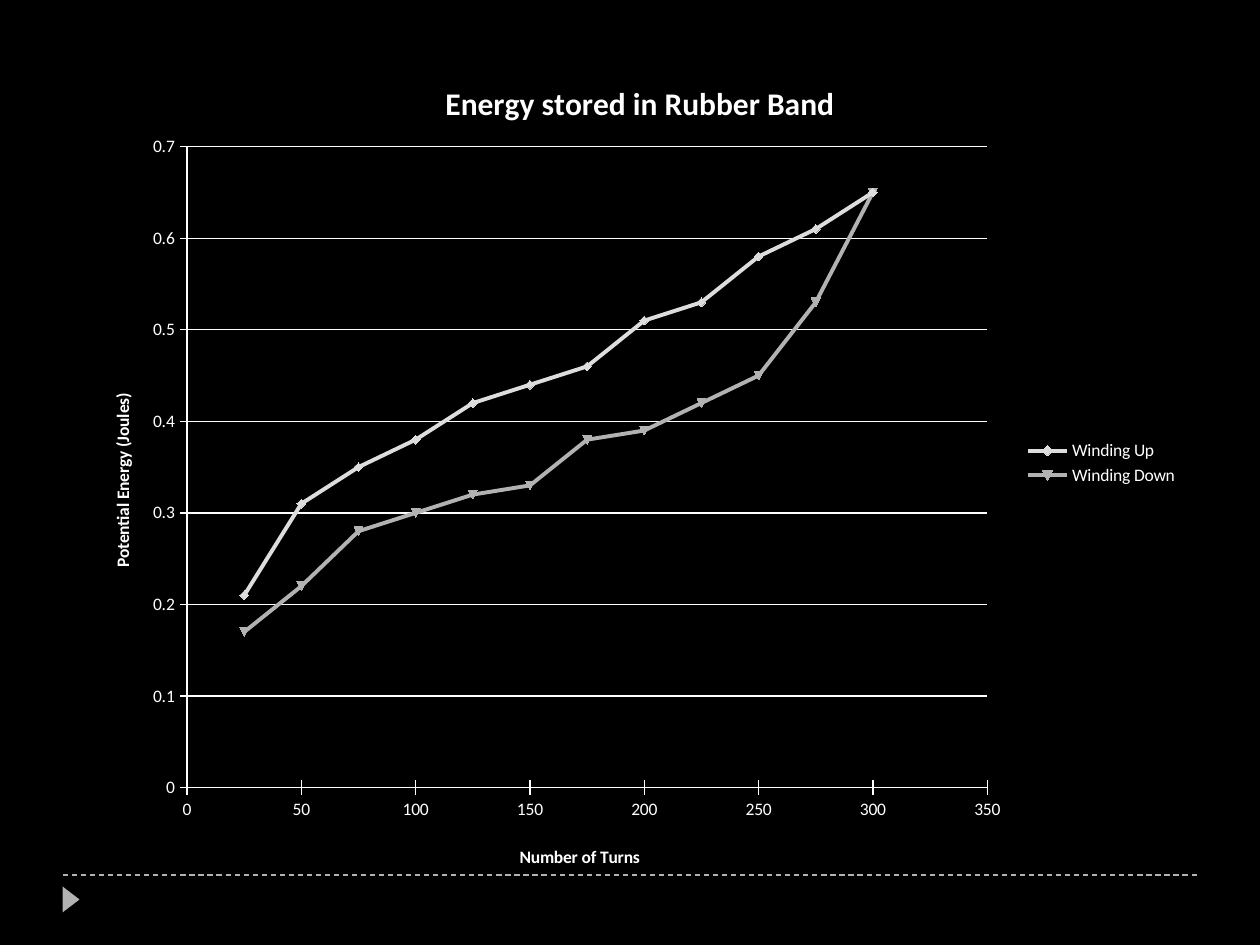
from pptx import Presentation
from pptx.chart.data import XyChartData
from pptx.dml.color import RGBColor
from pptx.enum.chart import (XL_CHART_TYPE, XL_LEGEND_POSITION, XL_MARKER_STYLE,
                             XL_TICK_MARK)
from pptx.enum.dml import MSO_LINE
from pptx.enum.shapes import MSO_CONNECTOR, MSO_SHAPE
from pptx.oxml import parse_xml
from pptx.oxml.ns import nsdecls, qn
from pptx.util import Pt

SCATTER = XL_CHART_TYPE.XY_SCATTER_SMOOTH
RIGHT = XL_LEGEND_POSITION.RIGHT
AUTO = XL_MARKER_STYLE.AUTOMATIC
CROSS, NO_TICK = XL_TICK_MARK.CROSS, XL_TICK_MARK.NONE
DASH = MSO_LINE.DASH
STRAIGHT = MSO_CONNECTOR.STRAIGHT
TRIANGLE = MSO_SHAPE.ISOSCELES_TRIANGLE

SCALE = 914400 / 126
FONT = "Calibri"
WHITE, BLACK, LIGHT, GREY = "FFFFFF", "000000", "DDDDDD", "B2B2B2"
FRAME = (78, 39, 1113, 848)
TURNS = range(25, 301, 25)
SERIES = [
    ("Winding Up", LIGHT,
     [0.21, 0.31, 0.35, 0.38, 0.42, 0.44, 0.46, 0.51, 0.53, 0.58, 0.61, 0.65]),
    ("Winding Down", GREY,
     [0.17, 0.22, 0.28, 0.3, 0.32, 0.33, 0.38, 0.39, 0.42, 0.45, 0.53, 0.65]),
]


def px(*vals):
    return [round(v * SCALE) for v in vals]


def paint(fill, tone):
    fill.solid()
    fill.fore_color.rgb = RGBColor.from_string(tone)


def stroke(line, tone, width):
    paint(line.fill, tone)
    line.width = Pt(width)


def style(font, size=10, bold=False, tone=WHITE):
    font.name, font.size, font.bold = FONT, Pt(size), bold
    font.color.rgb = RGBColor.from_string(tone)


def place(node, left, top, size=None):
    """Pin a chart part at slide pixels, as shares of the chart frame."""
    x, y, wide, high = FRAME
    vals = {"x": (left - x) / wide, "y": (top - y) / high}
    inner = ""
    if size:
        vals.update(w=size[0] / wide, h=size[1] / high)
        inner = '<c:layoutTarget val="inner"/>'
    modes = '<c:xMode val="edge"/><c:yMode val="edge"/>'
    parts = "".join(f'<c:{k} val="{v:.3f}"/>' for k, v in vals.items())
    layout = parse_xml(f'<c:layout {nsdecls("c")}><c:manualLayout>{inner}{modes}'
                       f'{parts}</c:manualLayout></c:layout>')
    old = node.find(qn("c:layout"))
    if old is not None:
        node.remove(old)
    text = node.find(qn("c:tx"))
    node.insert(0 if text is None else 1, layout)


def add_title(host, text, left, top, **form):
    """Give a chart or an axis its title."""
    title = getattr(host, "chart_title", None) or host.axis_title
    para = title.text_frame.paragraphs[0]
    run = para.add_run()
    run.text = text
    style(run.font, bold=True, **form)
    place(title._element, left, top)


def set_axis(axis, top, step, form):
    axis.minimum_scale, axis.maximum_scale, axis.major_unit = 0, top, step
    axis.major_tick_mark, axis.minor_tick_mark = CROSS, NO_TICK
    axis.tick_labels.number_format = form
    axis.tick_labels.number_format_is_linked = False
    style(axis.tick_labels.font)
    stroke(axis.format.line, WHITE, 0.75)


def add_graph(slide):
    data = XyChartData()
    for name, _, vals in SERIES:
        row = data.add_series(name)
        for turn, val in zip(TURNS, vals):
            row.add_data_point(turn, val)
    chart = slide.shapes.add_chart(SCATTER, *px(*FRAME), data).chart
    style(chart.font)
    plot = chart.plots[0]
    plot.vary_by_categories = False
    for row, (_, tone, _) in zip(plot.series, SERIES):
        row.smooth = True
        stroke(row.format.line, tone, 2.25)
        row.marker.style, row.marker.size = AUTO, 5
        paint(row.marker.format.fill, tone)
        stroke(row.marker.format.line, tone, 0.75)

    across, up = chart.category_axis, chart.value_axis
    set_axis(across, 350, 50, "General")
    set_axis(up, 0.7, 0.1, "General")
    across.has_major_gridlines = False
    up.has_major_gridlines = True
    stroke(up.major_gridlines.format.line, WHITE, 0.75)
    add_title(chart, "Energy stored in Rubber Band", 440, 76, size=18)
    add_title(across, "Number of Turns", 516, 843)
    add_title(up, "Potential Energy (Joules)", 108, 390)
    place(chart._chartSpace.chart.plotArea, 187, 147, (800, 641))

    chart.has_legend = True
    chart.legend.position = RIGHT
    chart.legend.include_in_layout = False
    style(chart.legend.font)


def add_rule(slide, *ends):
    rule = slide.shapes.add_connector(STRAIGHT, *px(*ends))
    stroke(rule.line, GREY, 0.75)
    rule.line.dash_style = DASH
    rule._element.spPr.append(parse_xml(f'<a:effectLst {nsdecls("a")}/>'))


def add_arrow(slide, *box):
    arrow = slide.shapes.add_shape(TRIANGLE, *px(*box))
    arrow.rotation = 90
    arrow.shadow.inherit = False
    paint(arrow.fill, GREY)
    arrow.line.fill.background()


def main():
    deck = Presentation()
    deck.slide_width, deck.slide_height = px(1260, 945)
    slide = deck.slides.add_slide(deck.slide_layouts[6])
    paint(slide.background.fill, BLACK)
    add_rule(slide, 63, 875, 1197, 875)
    add_arrow(slide, 58, 891, 26, 17)
    add_graph(slide)
    deck.save("out.pptx")


if __name__ == "__main__":
    main()
